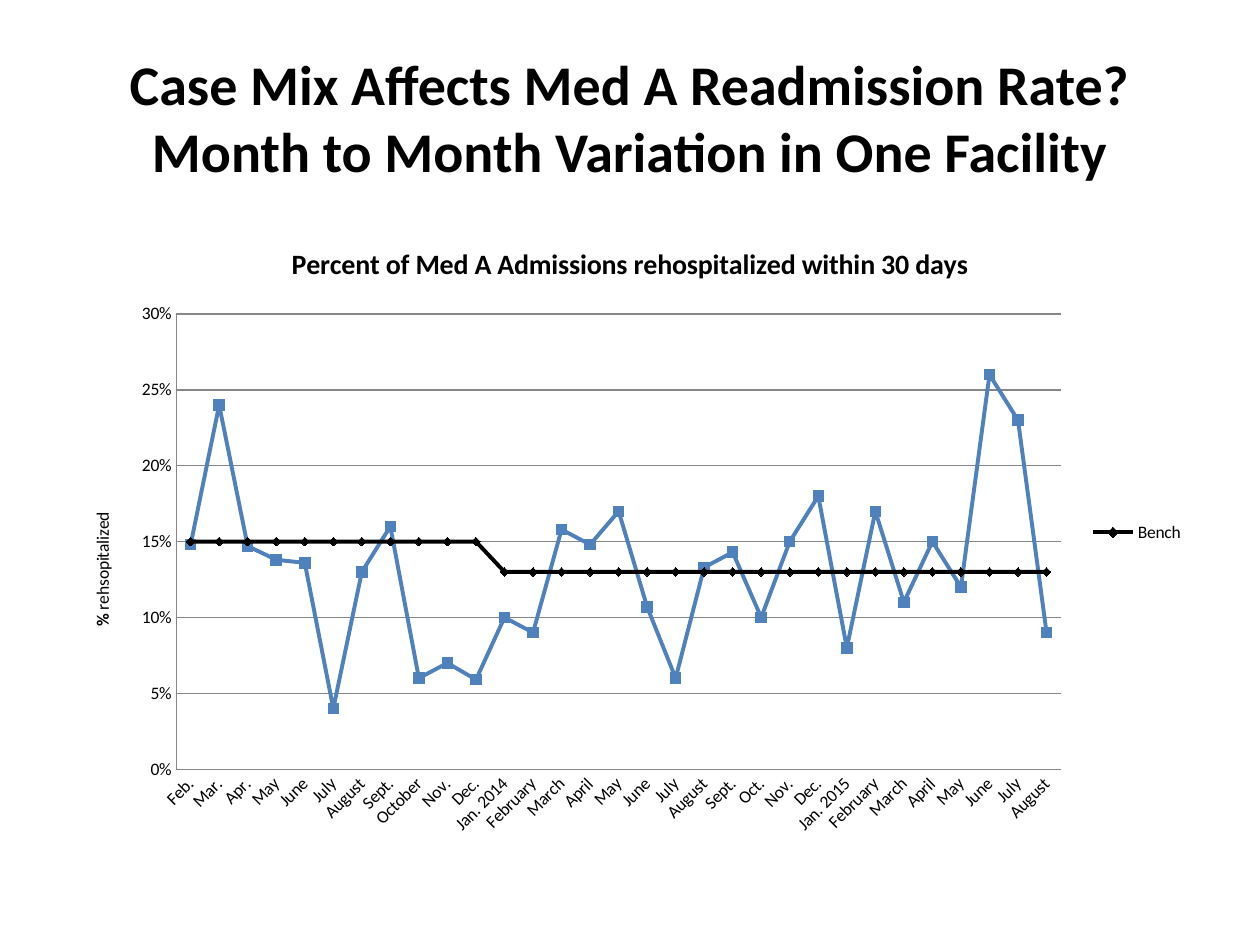
from lxml import etree
from pptx import Presentation
from pptx.chart.data import CategoryChartData
from pptx.dml.color import RGBColor
from pptx.enum import chart as ch, text
from pptx.oxml.ns import qn
from pptx.util import Pt

FONT = "Calibri"
COLORS = {"text": "000000", "rate": "4F81BD", "bench": "000000", "grid": "868686"}
TITLE = "Case Mix Affects Med A Readmission Rate? Month to Month Variation in One Facility"
CHART_TITLE = "Percent of Med A Admissions rehospitalized within 30 days"
MONTHS = [
    "Feb.", "Mar.", "Apr.", "May", "June", "July", "August", "Sept.", "October", "Nov.", "Dec.",
    "Jan. 2014", "February", "March", "April", "May", "June", "July", "August", "Sept.", "Oct.",
    "Nov.", "Dec.", "Jan. 2015", "February", "March", "April", "May", "June", "July", "August",
]
RATES = [
    0.148, 0.24, 0.147, 0.138, 0.136, 0.04, 0.13, 0.16, 0.06, 0.07, 0.059,
    0.1, 0.09, 0.158, 0.148, 0.17, 0.107, 0.06, 0.133, 0.143, 0.1,
    0.15, 0.18, 0.08, 0.17, 0.11, 0.15, 0.12, 0.26, 0.23, 0.09,
]
BENCH = [0.15] * 11 + [0.13] * 20
# name, values, colour, marker, marker size
SERIES = [
    ("Series 1", RATES, "rate", ch.XL_MARKER_STYLE.SQUARE, 6),
    ("Bench", BENCH, "bench", ch.XL_MARKER_STYLE.DIAMOND, 5),
]
TITLE_BOX = (36, 21.6, 648, 90)
CHART_BOX = (36, 126, 648, 356.4)
PLOT = {"x": 0.1, "y": 0.15, "w": 0.78, "h": 0.73}  # shares of the chart box


def rgb(name):
    return RGBColor.from_string(COLORS[name])


def style(font, size, bold=False):
    font.name, font.size, font.bold = FONT, Pt(size), bold
    font.color.rgb = rgb("text")


def add_run(p, words, size, bold=False):
    r = p.add_run()
    r.text = words
    style(r.font, size, bold)


def grey(line):
    line.color.rgb = rgb("grid")
    line.width = Pt(0.75)


def sub(parent, tag, val):
    etree.SubElement(parent, qn(tag)).set("val", str(val))


def place_plot(chart):
    """Fix the inner plot area at the PLOT shares."""
    area = chart._chartSpace.chart.plotArea
    for old in area.findall(qn("c:layout")):
        area.remove(old)
    layout = etree.Element(qn("c:layout"))
    manual = etree.SubElement(layout, qn("c:manualLayout"))
    sub(manual, "c:layoutTarget", "inner")
    for key in "xy":
        sub(manual, f"c:{key}Mode", "edge")
    for key, share in PLOT.items():
        sub(manual, f"c:{key}", share)
    area.insert(0, layout)


def hide_legend_entry(legend, index):
    entry = etree.Element(qn("c:legendEntry"))
    sub(entry, "c:idx", index)
    sub(entry, "c:delete", 1)
    legend._element.get_or_add_legendPos().addnext(entry)


def add_title(slide):
    tf = slide.shapes.add_textbox(*map(Pt, TITLE_BOX)).text_frame
    tf.word_wrap = True
    tf.vertical_anchor = text.MSO_ANCHOR.MIDDLE
    p = tf.paragraphs[0]
    p.alignment = text.PP_ALIGN.CENTER
    add_run(p, TITLE, 32, True)


def add_rate_chart(slide):
    data = CategoryChartData(number_format="0%")
    data.categories = MONTHS
    for name, values, *_ in SERIES:
        data.add_series(name, values)
    chart = slide.shapes.add_chart(
        ch.XL_CHART_TYPE.LINE_MARKERS, *map(Pt, CHART_BOX), data).chart
    style(chart.font, 10)
    add_run(chart.chart_title.text_frame.paragraphs[0], CHART_TITLE, 16, True)
    chart.plots[0].vary_by_categories = False

    for s, (_, _, color, marker, size) in zip(chart.plots[0].series, SERIES):
        s.smooth = False
        s.format.line.color.rgb = rgb(color)
        s.format.line.width = Pt(2.25)
        s.marker.style, s.marker.size = marker, size
        s.marker.format.fill.solid()
        s.marker.format.fill.fore_color.rgb = rgb(color)
        s.marker.format.line.color.rgb = rgb(color)

    months, rates = chart.category_axis, chart.value_axis
    for axis in (months, rates):
        axis.major_tick_mark = axis.minor_tick_mark = ch.XL_TICK_MARK.NONE
        style(axis.tick_labels.font, 10)
        grey(axis.format.line)
    months._element.txPr.bodyPr.set("rot", str(-45 * 60000))
    rates.minimum_scale, rates.maximum_scale, rates.major_unit = 0, 0.3, 0.05
    rates.tick_labels.number_format = "0%"
    rates.tick_labels.number_format_is_linked = False
    rates.has_major_gridlines = True
    grey(rates.major_gridlines.format.line)
    tf = rates.axis_title.text_frame
    tf._txBody.bodyPr.set("rot", str(-90 * 60000))
    add_run(tf.paragraphs[0], "% ", 10, True)
    add_run(tf.paragraphs[0], "rehsopitalized", 10)

    chart.has_legend = True
    chart.legend.position = ch.XL_LEGEND_POSITION.RIGHT
    chart.legend.include_in_layout = False
    style(chart.legend.font, 10)
    hide_legend_entry(chart.legend, 0)
    place_plot(chart)


def main():
    prs = Presentation()
    prs.slide_width, prs.slide_height = Pt(720), Pt(540)
    slide = prs.slides.add_slide(prs.slide_layouts[6])
    add_title(slide)
    add_rate_chart(slide)
    prs.save("out.pptx")


if __name__ == "__main__":
    main()
